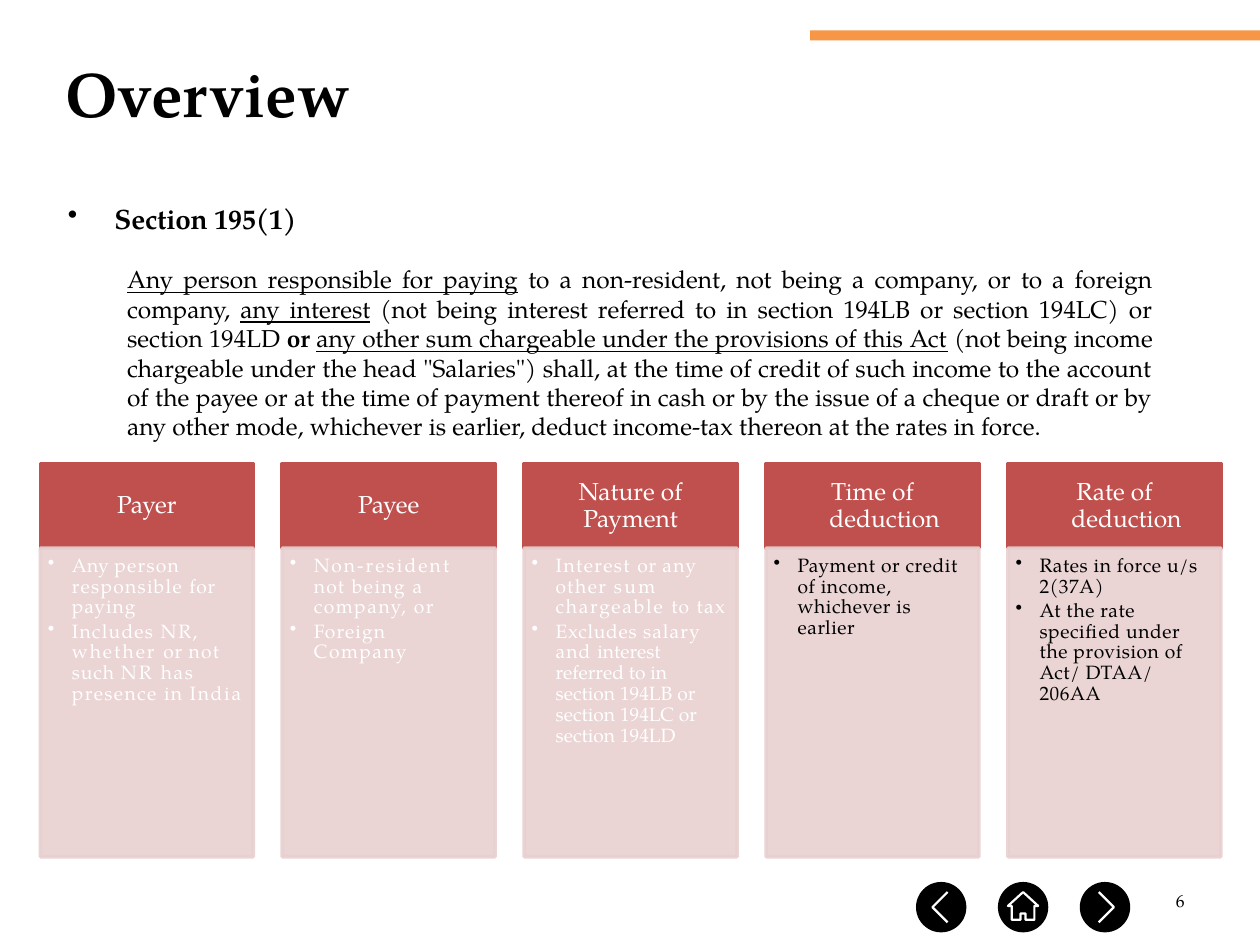
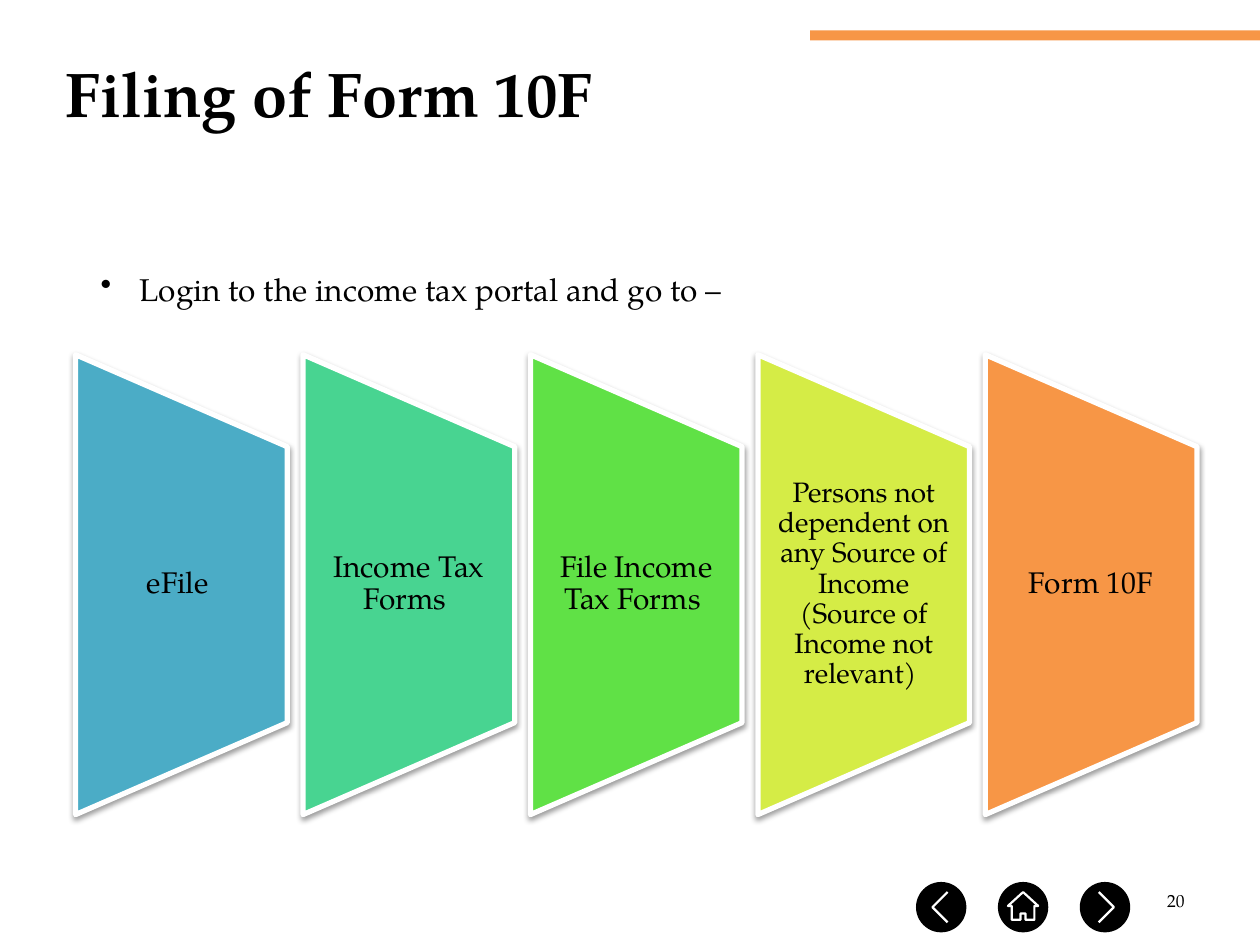
"""Builds two slides on withholding tax: an overview of section 195(1) and the filing of Form 10F."""
from collections import namedtuple

from lxml import etree
from pptx import Presentation
from pptx import util as u
from pptx.dml.color import RGBColor
from pptx.enum import shapes, text
from pptx.oxml.ns import qn

BLACK = RGBColor(0x00, 0x00, 0x00)
WHITE = RGBColor(0xFF, 0xFF, 0xFF)
ORANGE = RGBColor(0xF7, 0x96, 0x46)
RED = RGBColor(0xC0, 0x50, 0x4D)
PINK = RGBColor(0xE8, 0xD0, 0xD0)
BLUE = RGBColor(0x4B, 0xAC, 0xC6)
TEAL = RGBColor(0x48, 0xD4, 0x91)
GREEN = RGBColor(0x60, 0xE1, 0x46)
LIME = RGBColor(0xD5, 0xEC, 0x46)

LEFT, CENTER, RIGHT, JUSTIFY = (
    text.PP_ALIGN.LEFT, text.PP_ALIGN.CENTER, text.PP_ALIGN.RIGHT, text.PP_ALIGN.JUSTIFY)
TOP, MIDDLE = text.MSO_ANCHOR.TOP, text.MSO_ANCHOR.MIDDLE
RECTANGLE = shapes.MSO_SHAPE.RECTANGLE

Span = namedtuple("Span", "text spacing bold underline", defaults=(0, None, None))

NAVIGATION = [
    (7.47, [(5, -12), (-7, 0), (5, 12)], False),
    (8.12, [(-12, -1), (0, -12), (12, -1), (9, -1), (9, 10), (2, 10),
            (2, 5), (-2, 5), (-2, 10), (-9, 10), (-9, -1)], True),
    (8.77, [(-5, -12), (7, 0), (-5, 12)], False),
]

SECTION_TEXT = [
    Span("Any person responsible for paying", underline=True),
    Span(" to a non-resident, not being a company, or to a foreign company, "),
    Span("any interest", underline=True),
    Span(" (not being interest referred to in section 194LB or section 194LC) or section 194LD "),
    Span("or ", bold=True),
    Span("any other sum chargeable under the provisions of this Act", underline=True),
    Span(" (not being income chargeable under the head \"Salaries\") shall, at the time of credit "
         "of such income to the account of the payee or at the time of payment thereof in cash or "
         "by the issue of a cheque or draft or by any other mode, whichever is earlier, deduct "
         "income-tax thereon at the rates in force."),
]

PANELS = [
    ("Payer", 0, WHITE, [
        [Span("Any ", 0.2), Span("person responsible ", 0.7), Span("for ", 0.5),
         Span("paying", 0.6)],
        [Span("Includes ", 0.7), Span("NR, ", 0.9), Span("whether ", 1.1), Span("or ", 0.4),
         Span("not ", 0.8), Span("such ", 0.5), Span("NR ", 1.2), Span("has ", 0.9),
         Span("presence ", 0.8), Span("in ", 0.7), Span("India", 1)],
    ]),
    ("Payee", 0, WHITE, [
        [Span("Non-resident ", 1.2), Span("not being ", 0.8), Span("a ", 1.8),
         Span("company, or", 0.9)],
        [Span("Foreign ", 0.6), Span("Company", 0.9)],
    ]),
    ("Nature of Payment", 0, WHITE, [
        [Span("Interest ", 0.8), Span("or ", 0.4), Span("any other ", 0.8), Span("sum ", 1.4),
         Span("chargeable ", 1), Span("to ", 0.7), Span("tax", 0.8)],
        [Span("Excludes ", 0.4), Span("salary and ", 0.6),
         Span("interest referred to in section 194LB or section 194LC or section 194LD")],
    ]),
    ("Time of deduction", 0.19, BLACK, [
        [Span("Payment or credit of income, whichever is earlier", 0.3)],
    ]),
    ("Rate of deduction", 0.19, BLACK, [
        [Span("Rates in force u/s 2(37A)", 0.3)],
        [Span("At the rate specified under the provision of Act/ DTAA/ 206AA", 0.3)],
    ]),
]

STEPS = [
    ("eFile ", BLUE, 17),
    ("Income Tax Forms ", TEAL, 17),
    ("File Income Tax Forms ", GREEN, 17),
    ("Persons not dependent on any Source of Income (Source of Income not relevant) ", LIME, 16),
    ("Form 10F", ORANGE, 17),
]


class Deck:
    font = "TeX Gyre Pagella"

    def __init__(self):
        self.deck = Presentation()
        self.deck.slide_width, self.deck.slide_height = u.Inches(10), u.Inches(7.5)
        self.page = None

    def add_page(self, title, number):
        self.page = self.deck.slides.add_slide(self.deck.slide_layouts[5])
        holder = self.page.shapes.title
        holder.left, holder.top, holder.width, holder.height = map(
            u.Inches, (0.42, 0.33, 8.9, 1.39))
        frame = self.frame(holder, TOP, (0.1, 0.1, 0.1, 0.05))
        self.add_text(frame, title, 36, bold=True)
        self.shape(RECTANGLE, 6.43, 0.24, 3.57, 0.08, ORANGE)
        self.add_text(self.text_box(7.17, 6.95, 2.33, 0.4, MIDDLE), str(number), 10, align=RIGHT)
        for center, points, closed in NAVIGATION:
            self.button(center, 7.2, points, closed)

    def frame(self, box, anchor=TOP, insets=(0.1, 0.05, 0.1, 0.05)):
        frame = box.text_frame
        frame.word_wrap = True
        frame.auto_size = text.MSO_AUTO_SIZE.NONE
        frame.vertical_anchor = anchor
        frame.margin_left, frame.margin_top, frame.margin_right, frame.margin_bottom = map(
            u.Inches, insets)
        return frame

    def text_box(self, left, top, width, height, anchor=TOP, insets=(0.1, 0.05, 0.1, 0.05)):
        box = self.page.shapes.add_textbox(*map(u.Inches, (left, top, width, height)))
        return self.frame(box, anchor, insets)

    def add_text(self, frame, spans, size, color=BLACK, bold=False, align=LEFT, margin=0,
                 indent=0, bullet=False, line=1.0, before=0, after=0):
        para = frame.paragraphs[0]
        if para.runs:
            para = frame.add_paragraph()
        para.alignment, para.line_spacing = align, line
        para.space_before, para.space_after = u.Pt(before), u.Pt(after)
        para.font.name, para.font.size, para.font.bold = self.font, u.Pt(size), bold
        para.font.color.rgb = color
        properties = para._p.get_or_add_pPr()
        properties.set("marL", str(u.Inches(margin)))
        properties.set("indent", str(u.Inches(indent)))
        if bullet:
            mark = etree.Element(qn("a:buChar"), char="•")
            properties.find(qn("a:defRPr")).addprevious(mark)
        for span in [Span(spans)] if isinstance(spans, str) else spans:
            run = para.add_run()
            run.text = span.text
            font = run.font
            font.name, font.size, font.color.rgb = self.font, u.Pt(size), color
            font.bold = bold if span.bold is None else span.bold
            font.underline = span.underline
            if span.spacing:
                run._r.get_or_add_rPr().set("spc", str(round(span.spacing * 100)))

    def shape(self, kind, left, top, width, height, fill, line=None, weight=2, opacity=100):
        box = self.page.shapes.add_shape(kind, *map(u.Inches, (left, top, width, height)))
        box.shadow.inherit = False
        box.fill.solid()
        box.fill.fore_color.rgb = fill
        if line is None:
            box.line.fill.background()
        else:
            box.line.color.rgb = line
            box.line.width = u.Pt(weight)
        if opacity < 100:
            for color in box._element.spPr.iter(qn("a:srgbClr")):
                etree.SubElement(color, qn("a:alpha"), val=str(opacity * 1000))
        return box

    def drop_shadow(self, box):
        effects = box._element.spPr.find(qn("a:effectLst"))
        shadow = etree.SubElement(
            effects, qn("a:outerShdw"), blurRad=str(u.Pt(3.1)), dist=str(u.Pt(1.6)),
            dir=str(90 * 60000), rotWithShape="0")
        color = etree.SubElement(shadow, qn("a:srgbClr"), val=str(BLACK))
        etree.SubElement(color, qn("a:alpha"), val="38000")

    def button(self, x, y, points, closed):
        self.shape(shapes.MSO_SHAPE.OVAL, x - 0.2, y - 0.2, 0.4, 0.4, BLACK)
        corners = [(x * 100 + dx, y * 100 + dy) for dx, dy in points]
        builder = self.page.shapes.build_freeform(*corners[0], scale=u.Inches(0.01))
        builder.add_line_segments(corners[1:], close=closed)
        icon = builder.convert_to_shape()
        icon.shadow.inherit = False
        icon.fill.background()
        icon.line.color.rgb = WHITE
        icon.line.width = u.Pt(1.25)

    def panel(self, left, heading, hang, color, bullets):
        header = self.shape(RECTANGLE, left, 3.68, 1.69, 0.67, RED, RED)
        self.add_text(self.frame(header, MIDDLE, (0.11, 0.06, 0.11, 0.06)), heading, 14, WHITE,
                      align=CENTER, margin=hang, indent=-hang, line=0.9)
        body = self.shape(RECTANGLE, left, 4.35, 1.69, 2.45, PINK, PINK, opacity=90)
        frame = self.frame(body, TOP, (0.06, 0.06, 0.09, 0.1))
        for spans in bullets:
            self.add_text(frame, spans, 11, color, margin=0.19, indent=-0.19, bullet=True,
                          line=0.9, after=2)

    def step(self, left, label, fill, size):
        width, height, middle = 1.68, 3.65, 4.64
        box = self.shape(shapes.MSO_SHAPE.FLOWCHART_MANUAL_OPERATION,
                         left + (width - height) / 2, middle - width / 2, height, width,
                         fill, WHITE, 3)
        box.rotation = 270
        self.drop_shadow(box)
        frame = self.text_box(left, 3.54, width, 2.19, MIDDLE, (0.12, 0, 0.12, 0))
        self.add_text(frame, label, size, align=CENTER, line=0.9)


def main():
    deck = Deck()

    deck.add_page("Overview", 6)
    frame = deck.text_box(0.42, 1.55, 8.83, 2.26)
    deck.add_text(frame, [Span("Section 195(1)", -0.1)], 16, bold=True, margin=0.39,
                  indent=-0.37, bullet=True, before=1.1)
    deck.add_text(frame, SECTION_TEXT, 14, align=JUSTIFY, margin=0.49, before=16.75)
    for index, panel in enumerate(PANELS):
        deck.panel(0.32 + 1.92 * index, *panel)

    deck.add_page("Filing of Form 10F", 20)
    login = deck.text_box(0.7, 2.09, 8.62, 0.71)
    deck.add_text(login, "Login to the income tax portal and go to –", 18, margin=0.31,
                  indent=-0.31, bullet=True)
    for index, step in enumerate(STEPS):
        deck.step(0.6 + 7.22 / 4 * index, *step)

    deck.deck.save("out.pptx")


if __name__ == "__main__":
    main()
